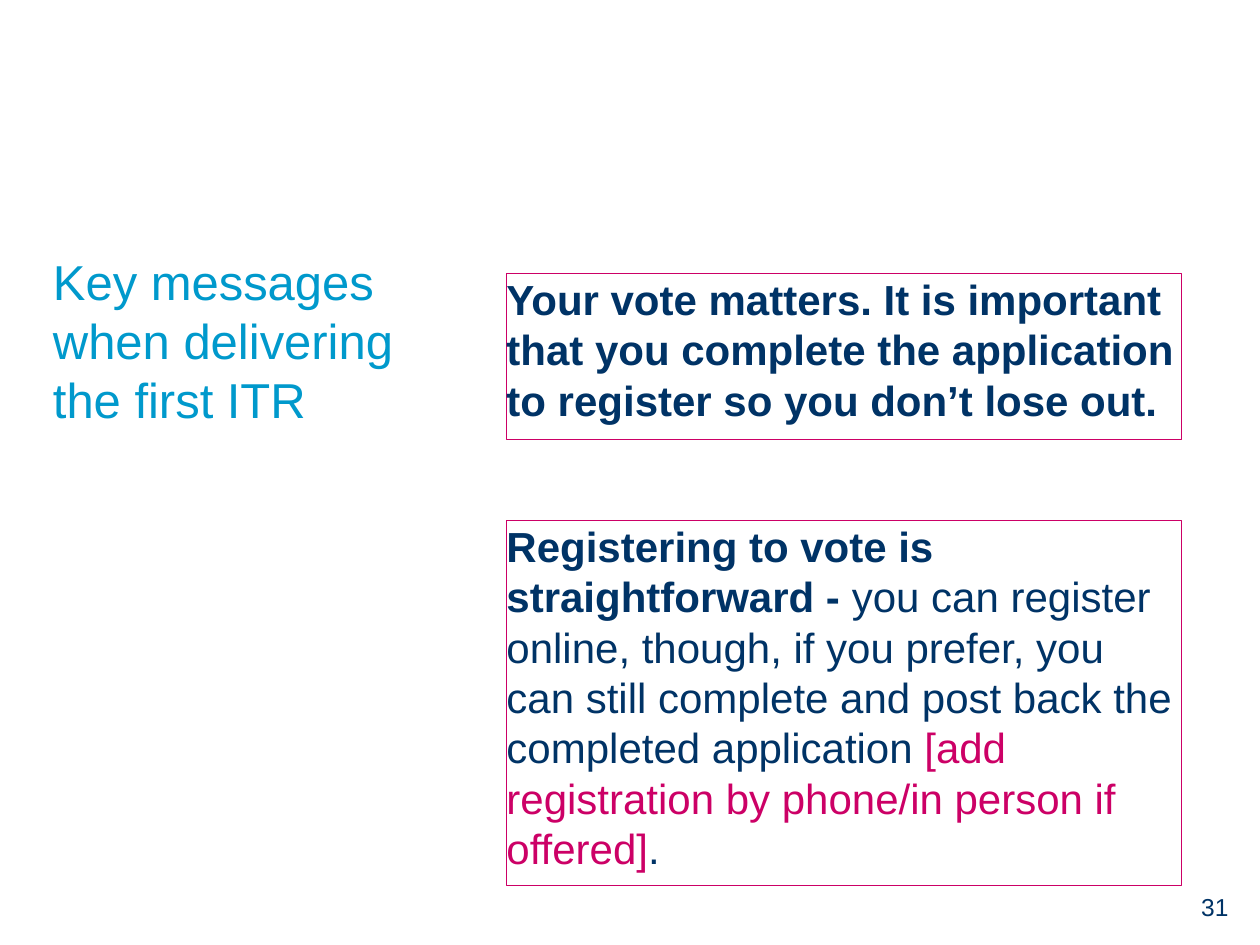
from dataclasses import dataclass

import pptx
import pptx.dml.color
import pptx.enum.shapes
import pptx.enum.text
import pptx.util

EMU_PER_PX = 9144  # 100 px to the inch
NAVY, CYAN, MAGENTA = "003366", "0099CC", "CC0066"
ALIGN = pptx.enum.text.PP_ALIGN


@dataclass(frozen=True)
class Span:
    text: str
    color: str = NAVY
    bold: bool = False


@dataclass(frozen=True)
class TextBlock:
    left: int
    top: int
    width: int
    height: int
    size: int
    spans: tuple[Span, ...]
    align: ALIGN = ALIGN.LEFT
    outline: str | None = None


MESSAGE_LEFT, MESSAGE_WIDTH = 402, 536

BLOCKS = (
    TextBlock(42, 200, 275, 467, 28,
              (Span("Key messages when delivering the first ITR", CYAN),)),
    TextBlock(767, 708, 208, 25, 14, (Span("31"),), ALIGN.RIGHT),
    TextBlock(MESSAGE_LEFT, 413, MESSAGE_WIDTH, 290, 24, (
        Span("Registering to vote is straightforward - ", bold=True),
        Span("you can register online, though, if you prefer, you can still "
             "complete and post back the completed application "),
        Span("[add registration by phone/in person if offered]", MAGENTA),
        Span("."),
    ), outline=MAGENTA),
    TextBlock(MESSAGE_LEFT, 217, MESSAGE_WIDTH, 132, 24, (
        Span("Your vote matters. It is important that you complete the "
             "application to register so you don’t lose out.", bold=True),
    ), outline=MAGENTA),
)


def px(length: int) -> pptx.util.Emu:
    return pptx.util.Emu(length * EMU_PER_PX)


def rgb(color: str) -> pptx.dml.color.RGBColor:
    return pptx.dml.color.RGBColor.from_string(color)


def draw_block(page: pptx.slide.Slide, block: TextBlock) -> None:
    place = [px(side) for side in (block.left, block.top, block.width, block.height)]
    if block.outline:
        box = page.shapes.add_shape(pptx.enum.shapes.MSO_SHAPE.RECTANGLE, *place)
        box.shadow.inherit = False
        box.fill.background()
        box.line.color.rgb = rgb(block.outline)
        box.line.width = pptx.util.Pt(0.75)
    else:
        box = page.shapes.add_textbox(*place)

    frame = box.text_frame
    frame.word_wrap = True
    frame.vertical_anchor = pptx.enum.text.MSO_ANCHOR.TOP
    frame.margin_left = frame.margin_top = frame.margin_right = frame.margin_bottom = 0

    para = frame.paragraphs[0]
    para.alignment = block.align
    para.font.name = "Arial"
    para.font.size = pptx.util.Pt(block.size)
    for span in block.spans:
        run = para.add_run()
        run.text = span.text
        run.font.bold = span.bold
        run.font.color.rgb = rgb(span.color)


def main() -> None:
    deck = pptx.Presentation()
    deck.slide_width, deck.slide_height = px(1000), px(750)
    page = deck.slides.add_slide(deck.slide_layouts[6])
    for block in BLOCKS:
        draw_block(page, block)
    deck.save("out.pptx")


if __name__ == "__main__":
    main()
